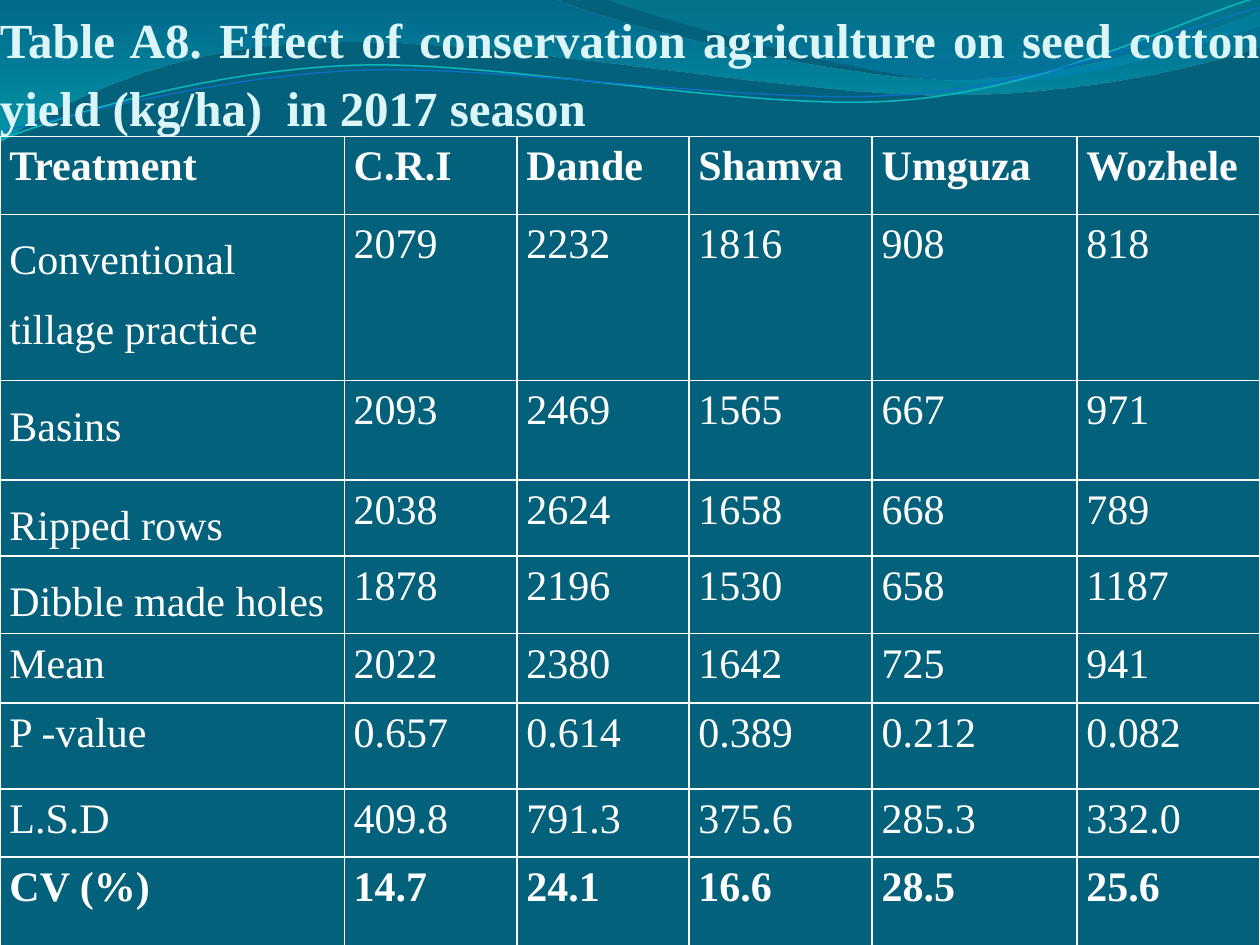
from lxml import etree
from pptx import Presentation
from pptx import util as u
from pptx.dml.color import RGBColor
from pptx.enum import text
from pptx.oxml import ns

Cm, Pt = u.Cm, u.Pt

BACKGROUND = RGBColor(0x04, 0x61, 0x7B)
WHITE = RGBColor(0xFF, 0xFF, 0xFF)
TITLE = RGBColor(0xDB, 0xF5, 0xF9)
DEEP_BLUE = RGBColor(0x00, 0x74, 0xA1)
AQUA = RGBColor(0x00, 0xC6, 0xCF)
TEAL = RGBColor(0x00, 0xA1, 0xA9)
SKY_BLUE = RGBColor(0x00, 0x8B, 0xBF)
TURQUOISE = RGBColor(0x0A, 0xB8, 0xBF)
BLUE = RGBColor(0x0F, 0x6F, 0xC6)

# Outlines in cm: pairs are straight steps, six numbers are a Bezier curve.
LEFT_WAVE = [
    (0, 0), (11.18, -0.03),
    (12.09, 0.43, 16.87, 1.6, 19.25, 1.6),
    (21.67, 1.6, 24.33, 0.66, 25.4, 0.23),
    (25.43, 0.91),
    (24.97, 1.12, 22.1, 1.93, 18.95, 1.91),
    (15.8, 1.91, 9.7, 0.71, 6.53, 0.86),
    (3.28, 0.91, 1.17, 2.11, -0.03, 2.87),
    (0, 0),
]
RIGHT_WAVE = [
    (12.17, -0.03),
    (12.93, 0.28, 17.32, 1.57, 19.53, 1.65),
    (21.74, 1.75, 24.41, 0.81, 25.4, 0.53),
    (25.4, 0), (12.17, -0.03),
]
UPPER_CURVE = [
    (0, 2.82),
    (1.22, 2.36, 4.01, 1.45, 7.04, 1.32),
    (10.03, 1.19, 15.06, 2.26, 18.11, 2.03),
    (21.16, 1.8, 23.83, 0.38, 25.35, -0.05),
]
LOWER_CURVE = [
    (0, 2.64),
    (1.19, 2.44, 4.17, 1.55, 7.19, 1.42),
    (10.24, 1.3, 15.16, 2.13, 18.21, 1.91),
    (21.23, 1.7, 23.9, 0.53, 25.4, 0.15),
]

COLUMNS = [6.94, 3.48, 3.47, 3.69, 4.13, 3.69]
ROWS = [
    (1.57, "Treatment", "C.R.I", "Dande", "Shamva", "Umguza", "Wozhele"),
    (3.35, "Conventional tillage practice", "2079", "2232", "1816", "908", "818"),
    (2.01, "Basins", "2093", "2469", "1565", "667", "971"),
    (1.45, "Ripped rows ", "2038", "2624", "1658", "668", "789"),
    (1.57, "Dibble made holes", "1878", "2196", "1530", "658", "1187"),
    (1.4, "Mean", "2022", "2380", "1642", "725", "941"),
    (1.73, "P -value", "0.657", "0.614", "0.389", "0.212", "0.082"),
    (1.37, "L.S.D", "409.8", "791.3", "375.6", "285.3", "332.0"),
    (1.85, "CV (%)", "14.7", "24.1", "16.6", "28.5", "25.6"),
]
BOLD_ROWS = (0, len(ROWS) - 1)
TREATMENT_ROWS = range(1, 5)


class SlideBuilder:
    font = "Times New Roman"

    def __init__(self, s):
        self.s = s
        s.background.fill.solid()
        s.background.fill.fore_color.rgb = BACKGROUND

    def outline(self, outline, close):
        """Build a freeform, then join each curve's three points into a Bezier."""
        points = [(Cm(x), Cm(y)) for part in outline
                  for x, y in zip(part[::2], part[1::2])]
        builder = self.s.shapes.build_freeform(*points[0], scale=1.0)
        builder.add_line_segments(points[1:], close=close)
        sp = builder.convert_to_shape()
        sp.shadow.inherit = False
        steps = iter(list(sp._element.spPr.iter(ns.qn("a:lnTo"))))
        for part in outline[1:]:
            step = next(steps)
            if len(part) == 6:
                step.tag = ns.qn("a:cubicBezTo")
                for _ in range(2):
                    extra = next(steps)
                    step.append(extra[0])
                    extra.getparent().remove(extra)
        return sp

    def wave(self, outline, *stops):
        """Draw a filled wave; each stop is position, colour, opacity in percent."""
        sp = self.outline(outline, close=True)
        sp.line.fill.background()
        sp.fill.gradient()
        sp.fill.gradient_angle = 270
        for stop, (position, color, _) in zip(sp.fill.gradient_stops, stops):
            stop.position = position
            stop.color.rgb = color
        colors = sp._element.spPr.iter(ns.qn("a:srgbClr"))
        for element, (_, _, opacity) in zip(colors, stops):
            etree.SubElement(element, ns.qn("a:alpha"), val=str(opacity * 1000))

    def curve(self, outline, color, width):
        sp = self.outline(outline, close=False)
        sp.fill.background()
        sp.line.color.rgb = color
        sp.line.width = Pt(width)

    def paragraph(self, tf, content, size, color, bold, spacing=1.15, after=0):
        p = tf.paragraphs[0]
        p.text = content
        p.alignment = text.PP_ALIGN.JUSTIFY
        p.line_spacing = spacing
        p.space_after = Pt(after)
        p.font.name = self.font
        p.font.size = Pt(size)
        p.font.bold = bold
        p.font.color.rgb = color

    def title(self, content):
        tf = self.s.shapes.add_textbox(0, 0, Cm(25.4), Cm(2.75)).text_frame
        tf.word_wrap = True
        tf.vertical_anchor = text.MSO_ANCHOR.BOTTOM
        tf.margin_left = tf.margin_right = tf.margin_bottom = 0
        tf.margin_top = Cm(0.13)
        self.paragraph(tf, content, 28, TITLE, True)

    def borders(self, cell):
        tc_pr = cell._tc.get_or_add_tcPr()
        for side in ("lnL", "lnR", "lnT", "lnB"):
            line = etree.SubElement(tc_pr, ns.qn(f"a:{side}"), w=str(Pt(1)))
            fill = etree.SubElement(line, ns.qn("a:solidFill"))
            etree.SubElement(fill, ns.qn("a:srgbClr"), val=str(WHITE))

    def table(self, top, columns, rows):
        height = sum(row[0] for row in rows)
        table = self.s.shapes.add_table(len(rows), len(columns), 0, Cm(top),
                                        Cm(sum(columns)), Cm(height)).table
        table.first_row = table.horz_banding = False
        for column, width in zip(table.columns, columns):
            column.width = Cm(width)
        for i, (row_height, *values) in enumerate(rows):
            table.rows[i].height = Cm(row_height)
            for j, value in enumerate(values):
                cell = table.cell(i, j)
                cell.margin_left = cell.margin_right = Cm(0.19)
                cell.margin_top = cell.margin_bottom = 0
                self.borders(cell)
                cell.fill.background()
                is_treatment = j == 0 and i in TREATMENT_ROWS
                is_place = i == 0 and j > 0
                self.paragraph(cell.text_frame, value, 24, WHITE, i in BOLD_ROWS,
                               spacing=1.5 if is_treatment else 1.15,
                               after=0 if is_treatment or is_place else 6)


def main():
    prs = Presentation()
    prs.slide_width, prs.slide_height = Cm(25.4), Cm(19.05)
    b = SlideBuilder(prs.slides.add_slide(prs.slide_layouts[6]))
    b.wave(LEFT_WAVE, (0, DEEP_BLUE, 45), (1, AQUA, 55))
    b.wave(RIGHT_WAVE, (0, TEAL, 30), (0.8, SKY_BLUE, 45))
    b.curve(UPPER_CURVE, TURQUOISE, 0.85)
    b.curve(LOWER_CURVE, BLUE, 0.75)
    b.title("Table A8. Effect of conservation agriculture on seed cotton "
            "yield (kg/ha)  in 2017 season")
    b.table(2.75, COLUMNS, ROWS)
    prs.save("out.pptx")


if __name__ == "__main__":
    main()
